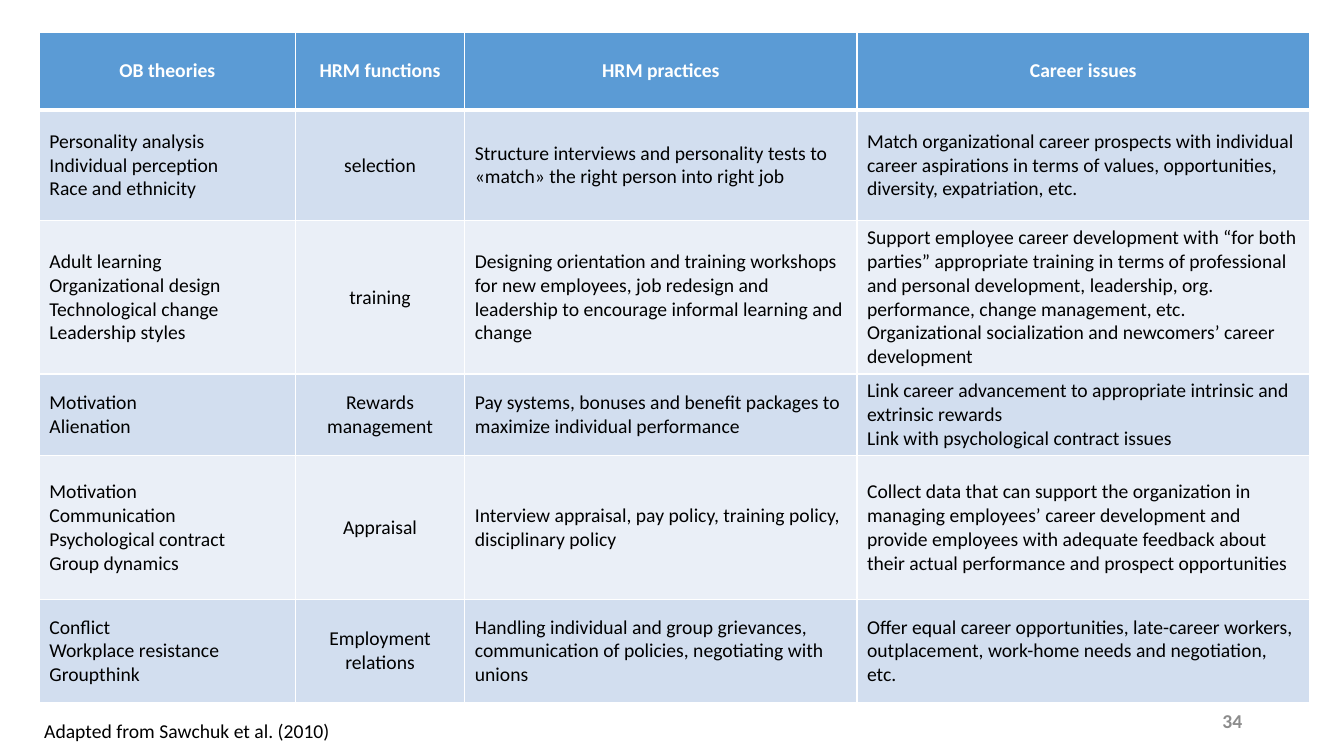
from lxml.etree import SubElement
from pptx import Presentation
from pptx.dml.color import RGBColor
from pptx.enum.text import MSO_ANCHOR, MSO_AUTO_SIZE, PP_ALIGN
from pptx.oxml.ns import qn
from pptx.util import Inches, Pt

WHITE = RGBColor(0xFF, 0xFF, 0xFF)
BLACK = RGBColor(0x00, 0x00, 0x00)
GREY = RGBColor(0x8C, 0x8C, 0x8C)
HEADER_BLUE = RGBColor(0x5B, 0x9B, 0xD5)
BAND_DARK = RGBColor(0xD2, 0xDE, 0xEF)
BAND_LIGHT = RGBColor(0xEA, 0xEF, 0xF7)

FONT = "Calibri"
TEXT_SIZE = Pt(14)
COLUMN_WIDTHS = [2.54, 1.68, 3.89, 4.49]
ROW_HEIGHTS = [0.77, 1.1, 1.43, 0.77, 1.43, 1.02]
FUNCTION_COLUMN = 1

# Each cell is a list of paragraphs.
HEADINGS = [["OB theories"], ["HRM functions"], ["HRM practices"], ["Career issues"]]
TOPICS = [
    [["Personality analysis", "Individual perception", "Race and ethnicity"],
     ["selection"],
     ["Structure interviews and personality tests to «match» the right person "
      "into right job"],
     ["Match organizational career prospects with individual career aspirations "
      "in terms of values, opportunities, diversity, expatriation, etc."]],
    [["Adult learning", "Organizational design", "Technological change",
      "Leadership styles"],
     ["training"],
     ["Designing orientation and training workshops for new employees, job "
      "redesign and leadership to encourage informal learning and change"],
     ["Support employee career development with “for both parties” appropriate "
      "training in terms of professional and personal development, leadership, "
      "org. performance, change management, etc.",
      "Organizational socialization and newcomers’ career development"]],
    [["Motivation", "Alienation"],
     ["Rewards management"],
     ["Pay systems, bonuses and benefit packages to maximize individual "
      "performance"],
     ["Link career advancement to appropriate intrinsic and extrinsic rewards",
      "Link with psychological contract issues"]],
    [["Motivation", "Communication", "Psychological contract", "Group dynamics"],
     ["Appraisal"],
     ["Interview appraisal, pay policy, training policy, disciplinary policy"],
     ["Collect data that can support the organization in managing employees’ "
      "career development and provide employees with adequate feedback about "
      "their actual performance and prospect opportunities"]],
    [["Conflict", "Workplace resistance", "Groupthink"],
     ["Employment relations"],
     ["Handling individual and group grievances, communication of policies, "
      "negotiating with unions"],
     ["Offer equal career opportunities, late-career workers, outplacement, "
      "work-home needs and negotiation, etc."]],
]


def write_paragraphs(frame, lines, color, bold=False, align=PP_ALIGN.LEFT):
    for index, line in enumerate(lines):
        paragraph = frame.add_paragraph() if index else frame.paragraphs[0]
        paragraph.alignment = align
        run = paragraph.add_run()
        run.text = line
        run.font.name = FONT
        run.font.size = TEXT_SIZE
        run.font.bold = bold
        run.font.color.rgb = color


def set_borders(cell, top, bottom):
    """Draw white cell borders; top and bottom are widths in points."""
    properties = cell._tc.get_or_add_tcPr()
    for side, width in (("L", 1), ("R", 1), ("T", top), ("B", bottom)):
        line = SubElement(properties, qn(f"a:ln{side}"), w=str(Pt(width)))
        fill = SubElement(line, qn("a:solidFill"))
        SubElement(fill, qn("a:srgbClr"), val=str(WHITE))


def fill_cell(cell, lines, row, column):
    is_header = row == 0
    set_borders(cell, top=3 if row == 1 else 1, bottom=3 if is_header else 1)
    band = BAND_DARK if row % 2 else BAND_LIGHT
    cell.fill.solid()
    cell.fill.fore_color.rgb = HEADER_BLUE if is_header else band
    cell.vertical_anchor = MSO_ANCHOR.MIDDLE
    centred = is_header or column == FUNCTION_COLUMN
    write_paragraphs(cell.text_frame, lines, WHITE if is_header else BLACK,
                     bold=is_header,
                     align=PP_ALIGN.CENTER if centred else PP_ALIGN.LEFT)


def add_theory_table(slide, left, top):
    rows = [HEADINGS] + TOPICS
    table = slide.shapes.add_table(
        len(rows), len(HEADINGS), left, top,
        Inches(sum(COLUMN_WIDTHS)), Inches(sum(ROW_HEIGHTS))).table
    for column, width in zip(table.columns, COLUMN_WIDTHS):
        column.width = Inches(width)
    for row, height in zip(table.rows, ROW_HEIGHTS):
        row.height = Inches(height)
    for row, cells in enumerate(rows):
        for column, lines in enumerate(cells):
            fill_cell(table.cell(row, column), lines, row, column)


def add_label(slide, text, left, top, width, height, color, **style):
    frame = slide.shapes.add_textbox(left, top, width, height).text_frame
    write_paragraphs(frame, [text], color, **style)
    return frame


def main():
    presentation = Presentation()
    presentation.slide_width = Inches(13.33)
    presentation.slide_height = Inches(7.5)
    slide = presentation.slides.add_slide(presentation.slide_layouts[6])

    add_theory_table(slide, Inches(0.39), Inches(0.32))

    source = add_label(slide, "Adapted from Sawchuk et al. (2010)", Inches(0.34),
                       Inches(7.08), Inches(3.06), Inches(0.34), BLACK)
    source.word_wrap = False
    source.auto_size = MSO_AUTO_SIZE.SHAPE_TO_FIT_TEXT

    page_number = add_label(slide, "34", Inches(9.42), Inches(6.95), Inches(3),
                            Inches(0.4), GREY, bold=True, align=PP_ALIGN.RIGHT)
    page_number.word_wrap = True
    page_number.vertical_anchor = MSO_ANCHOR.MIDDLE

    presentation.save("out.pptx")


if __name__ == "__main__":
    main()
